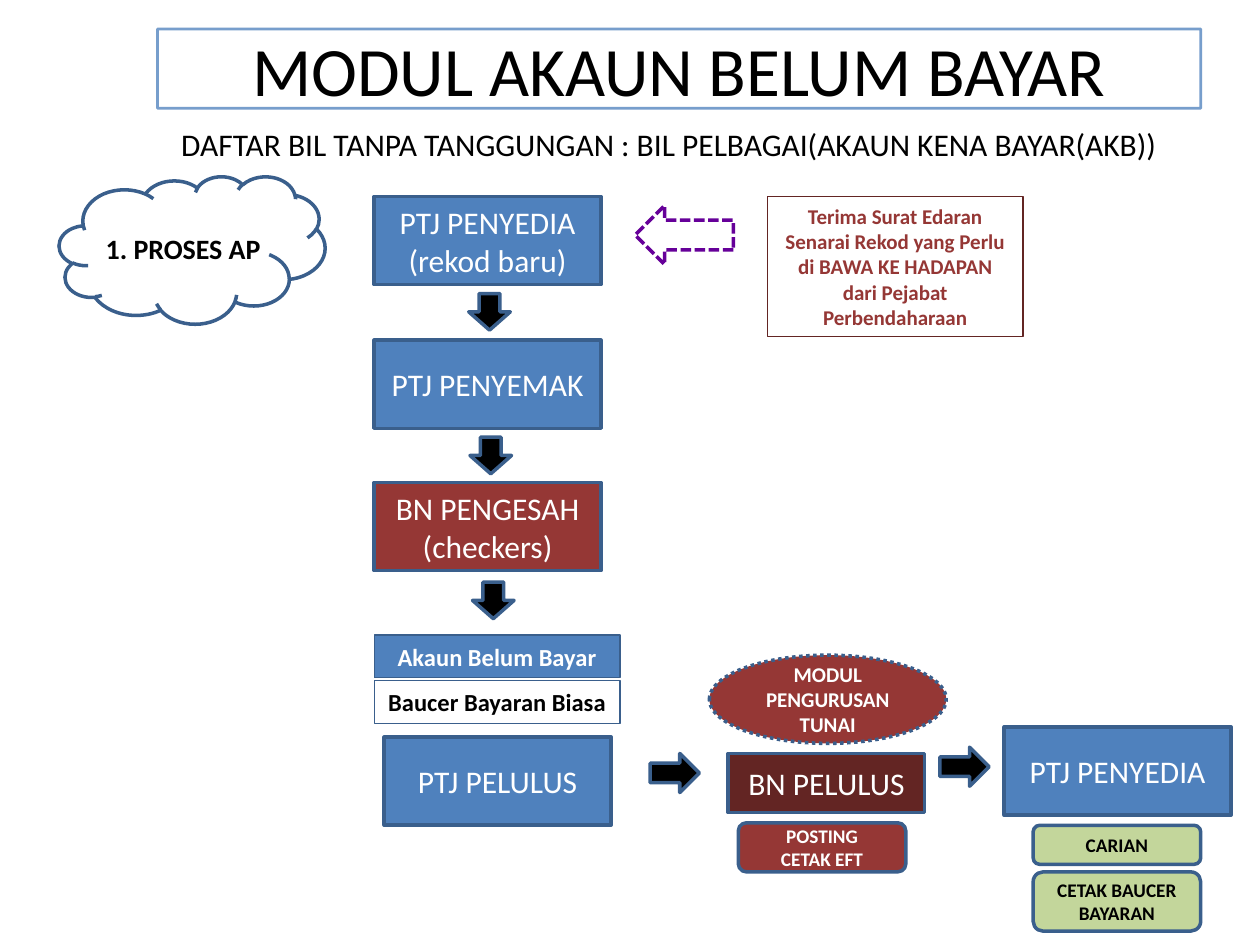
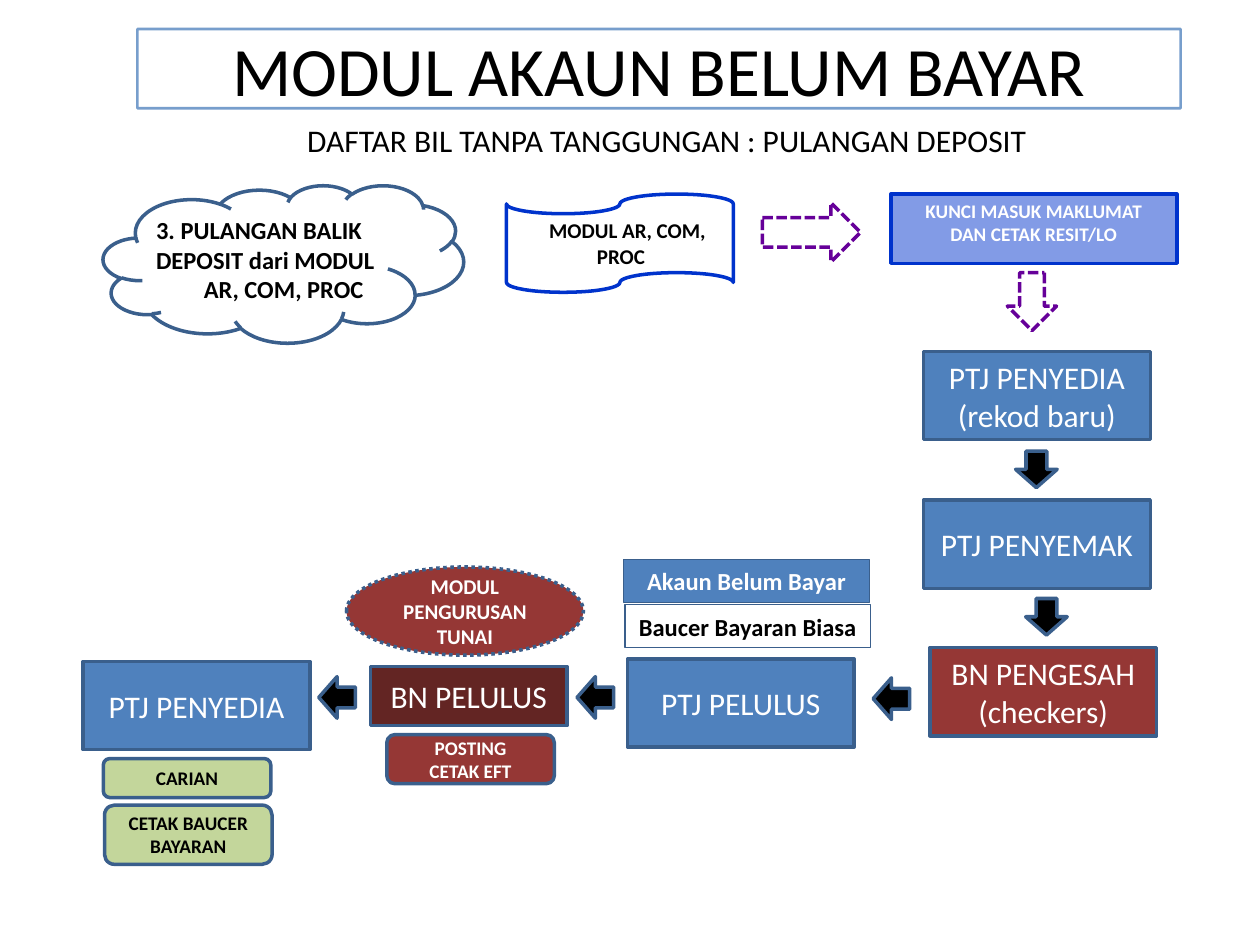
"""Build two process-flow slides for the accounts payable module."""
import dataclasses
import typing

import lxml.etree
import pptx
import pptx.dml.color
import pptx.enum.dml
import pptx.enum.shapes
import pptx.enum.text
import pptx.oxml.ns
import pptx.util

SHAPE = pptx.enum.shapes.MSO_SHAPE
DASH = pptx.enum.dml.MSO_LINE
ALIGN = pptx.enum.text.PP_ALIGN
ANCHOR = pptx.enum.text.MSO_ANCHOR
qn = pptx.oxml.ns.qn

EMU_PER_PX = 9144
FONT = "Calibri"
BLACK, WHITE = "000000", "FFFFFF"
BLUE, EDGE = "4F81BD", "3A5F8C"
RED, DARK_RED = "953735", "632523"
GREEN, ROYAL, PURPLE = "C3D69B", "0033CC", "660099"


@dataclasses.dataclass(frozen=True)
class Style:
    width: int
    height: int
    shape: typing.Optional[SHAPE] = SHAPE.RECTANGLE
    fill: typing.Optional[str] = None
    line: typing.Optional[str] = EDGE
    weight: float = 2
    dash: typing.Optional[DASH] = None
    opacity: int = 100
    color: str = WHITE
    size: float = 18
    bold: bool = False
    align: ALIGN = ALIGN.CENTER
    anchor: ANCHOR = ANCHOR.MIDDLE
    wrap: bool = True
    hanging: int = 0
    inset: int = 5


@dataclasses.dataclass(frozen=True)
class Block:
    style: Style
    text: str = ""
    angle: int = 0


class Place(typing.NamedTuple):
    block: Block
    left: int
    top: int


@dataclasses.dataclass(frozen=True)
class Flow:
    title_left: int
    places: tuple[Place, ...]


TASK = Style(180, 70, fill=BLUE)
CHECK = dataclasses.replace(TASK, fill=RED)
APPROVAL = Style(156, 47, fill=DARK_RED)
MODULE = Style(188, 70, SHAPE.OVAL, RED, dash=DASH.ROUND_DOT, size=12, bold=True)
POSTING = Style(133, 39, SHAPE.ROUNDED_RECTANGLE, RED, size=11, bold=True)
SEARCH = dataclasses.replace(POSTING, height=31, fill=GREEN, color=BLACK)
PRINT = dataclasses.replace(SEARCH, height=47)
LABEL = Style(195, 34, fill=BLUE, weight=0.75, size=14, bold=True)
VOUCHER_LABEL = dataclasses.replace(LABEL, fill=None, color=BLACK)
NOTICE = Style(203, 111, line=DARK_RED, weight=0.75, color=RED, size=12, bold=True)
SHORT_ARROW = Style(29, 33, SHAPE.RIGHT_ARROW, BLACK)
LONG_ARROW = dataclasses.replace(SHORT_ARROW, width=39, height=31)
INPUT_ARROW = Style(78, 47, SHAPE.RIGHT_ARROW, line=PURPLE, dash=DASH.SQUARE_DOT)
ENTRY_ARROW = dataclasses.replace(INPUT_ARROW, width=46, height=39)
CLOUD = Style(211, 117, SHAPE.CLOUD)
WIDE_CLOUD = dataclasses.replace(CLOUD, width=286, height=125)
TAPE = Style(180, 78, SHAPE.FLOWCHART_PUNCHED_TAPE, line=ROYAL)
ENTRY = Style(227, 55, fill=ROYAL, line=ROYAL, opacity=49, size=11, bold=True,
              anchor=ANCHOR.TOP, inset=4)
SUBTITLE = Style(803, 40, None, color=BLACK, align=ALIGN.LEFT, anchor=ANCHOR.TOP)
PROCESS_NAME = dataclasses.replace(SUBTITLE, width=145, height=37, size=16,
                                   bold=True, wrap=False)
REFUND_NAME = dataclasses.replace(SUBTITLE, width=213, height=81, size=14,
                                  bold=True, hanging=38)
SOURCE_NAME = dataclasses.replace(REFUND_NAME, width=156, height=50, size=12)
TITLE = Style(828, 63, line=BLUE, weight=1.5, opacity=76, color=BLACK, size=39.6)

TITLE_TEXT = "MODUL AKAUN BELUM BAYAR"
NEW_RECORD = Block(TASK, "PTJ PENYEDIA\n(rekod baru)")
REVIEWER = Block(TASK, "PTJ PENYEMAK")
CHECKER = Block(CHECK, "BN PENGESAH\n(checkers)")
OFFICE_APPROVER = Block(TASK, "PTJ PELULUS")
BANK_APPROVER = Block(APPROVAL, "BN PELULUS")
PREPARER = Block(TASK, "PTJ PENYEDIA")
PAYABLE = Block(LABEL, "Akaun Belum Bayar")
VOUCHER = Block(VOUCHER_LABEL, "Baucer Bayaran Biasa")
CASH_MODULE = Block(MODULE, "MODUL PENGURUSAN TUNAI")
POST_EFT = Block(POSTING, "POSTING\nCETAK EFT")
FIND = Block(SEARCH, "CARIAN")
PRINT_VOUCHER = Block(PRINT, "CETAK BAUCER BAYARAN")
DOWN = Block(SHORT_ARROW, angle=90)
BACK = Block(SHORT_ARROW, angle=180)
FORWARD = Block(LONG_ARROW)

MISC_BILL = Flow(125, (
    Place(Block(SUBTITLE, "DAFTAR BIL TANPA TANGGUNGAN : BIL PELBAGAI(AKAUN KENA BAYAR(AKB))"), 134, 94),
    Place(Block(CLOUD), 47, 140),
    Place(Block(PROCESS_NAME, "1. PROSES AP"), 74, 179),
    Place(NEW_RECORD, 297, 156),
    Place(DOWN, 374, 231),
    Place(REVIEWER, 297, 270),
    Place(DOWN, 375, 345),
    Place(CHECKER, 297, 383),
    Place(DOWN, 377, 460),
    Place(Block(INPUT_ARROW, angle=180), 504, 163),
    Place(Block(NOTICE, "Terima Surat Edaran Senarai Rekod yang Perlu di BAWA KE HADAPAN dari Pejabat Perbendaharaan"), 609, 156),
    Place(PAYABLE, 297, 504),
    Place(VOUCHER, 297, 540),
    Place(OFFICE_APPROVER, 305, 585),
    Place(FORWARD, 516, 598),
    Place(CASH_MODULE, 563, 520),
    Place(BANK_APPROVER, 578, 598),
    Place(POST_EFT, 586, 653),
    Place(FORWARD, 746, 593),
    Place(PREPARER, 797, 577),
    Place(FIND, 820, 655),
    Place(PRINT_VOUCHER, 820, 692),
))

DEPOSIT_REFUND = Flow(109, (
    Place(Block(SUBTITLE, "DAFTAR BIL TANPA TANGGUNGAN : PULANGAN DEPOSIT"), 234, 91),
    Place(Block(WIDE_CLOUD), 82, 147),
    Place(Block(REFUND_NAME, "3. PULANGAN BALIK\nDEPOSIT dari MODUL AR, COM, PROC"), 114, 166),
    Place(Block(TAPE), 402, 154),
    Place(Block(SOURCE_NAME, "MODUL AR, COM, PROC"), 426, 168),
    Place(Block(INPUT_ARROW), 605, 161),
    Place(Block(ENTRY, "KUNCI MASUK MAKLUMAT\nDAN CETAK RESIT/LO"), 707, 154),
    Place(Block(ENTRY_ARROW, angle=90), 796, 220),
    Place(NEW_RECORD, 733, 279),
    Place(DOWN, 808, 356),
    Place(REVIEWER, 733, 397),
    Place(DOWN, 816, 473),
    Place(CHECKER, 738, 514),
    Place(BACK, 693, 538),
    Place(PAYABLE, 495, 444),
    Place(VOUCHER, 496, 480),
    Place(OFFICE_APPROVER, 498, 523),
    Place(BACK, 458, 537),
    Place(CASH_MODULE, 275, 450),
    Place(BANK_APPROVER, 294, 529),
    Place(POST_EFT, 307, 583),
    Place(BACK, 253, 537),
    Place(PREPARER, 66, 525),
    Place(FIND, 82, 602),
    Place(PRINT_VOUCHER, 83, 639),
))


def px(length: int) -> pptx.util.Emu:
    return pptx.util.Emu(length * EMU_PER_PX)


def rgb(color: str) -> pptx.dml.color.RGBColor:
    return pptx.dml.color.RGBColor.from_string(color)


def set_opacity(parent, percent: int) -> None:
    color = parent.find(qn("a:solidFill"))[0]
    lxml.etree.SubElement(color, qn("a:alpha"), val=str(percent * 1000))


def paint(box, style: Style) -> None:
    properties = box._element.spPr
    if style.fill:
        box.fill.solid()
        box.fill.fore_color.rgb = rgb(style.fill)
        if style.opacity < 100:
            set_opacity(properties, style.opacity)
    else:
        box.fill.background()
    box.line.color.rgb = rgb(style.line)
    box.line.width = pptx.util.Pt(style.weight)
    if style.dash:
        box.line.dash_style = style.dash
    if style.opacity < 100 and not style.fill:
        set_opacity(properties.find(qn("a:ln")), style.opacity)


def write(box, text: str, style: Style) -> None:
    frame = box.text_frame
    frame.text = text
    frame.word_wrap = style.wrap
    frame.auto_size = pptx.enum.text.MSO_AUTO_SIZE.NONE
    frame.vertical_anchor = style.anchor
    frame.margin_top = frame.margin_bottom = px(style.inset)
    for para in frame.paragraphs:
        para.alignment = style.align
        if style.hanging:
            indent = para._p.get_or_add_pPr()
            indent.set("marL", str(px(style.hanging)))
            indent.set("indent", str(-px(style.hanging)))
        for span in para.runs:
            span.font.name = FONT
            span.font.size = pptx.util.Pt(style.size)
            span.font.bold = style.bold
            span.font.color.rgb = rgb(style.color)


def draw(page, place: Place) -> None:
    block, style = place.block, place.block.style
    frame = px(place.left), px(place.top), px(style.width), px(style.height)
    if style.shape is None:
        box = page.shapes.add_textbox(*frame)
    else:
        box = page.shapes.add_shape(style.shape, *frame)
        box.shadow.inherit = False
        box.rotation = block.angle
        paint(box, style)
    if block.text:
        write(box, block.text, style)


def add_title(page, left: int) -> None:
    title = page.shapes.title
    title.left, title.top = px(left), px(23)
    title.width, title.height = px(TITLE.width), px(TITLE.height)
    paint(title, TITLE)
    write(title, TITLE_TEXT, TITLE)


def main() -> None:
    deck = pptx.Presentation()
    deck.slide_width, deck.slide_height = px(1000), px(750)
    for flow in (MISC_BILL, DEPOSIT_REFUND):
        page = deck.slides.add_slide(deck.slide_layouts[5])
        add_title(page, flow.title_left)
        for place in flow.places:
            draw(page, place)
    deck.save("out.pptx")


if __name__ == "__main__":
    main()
